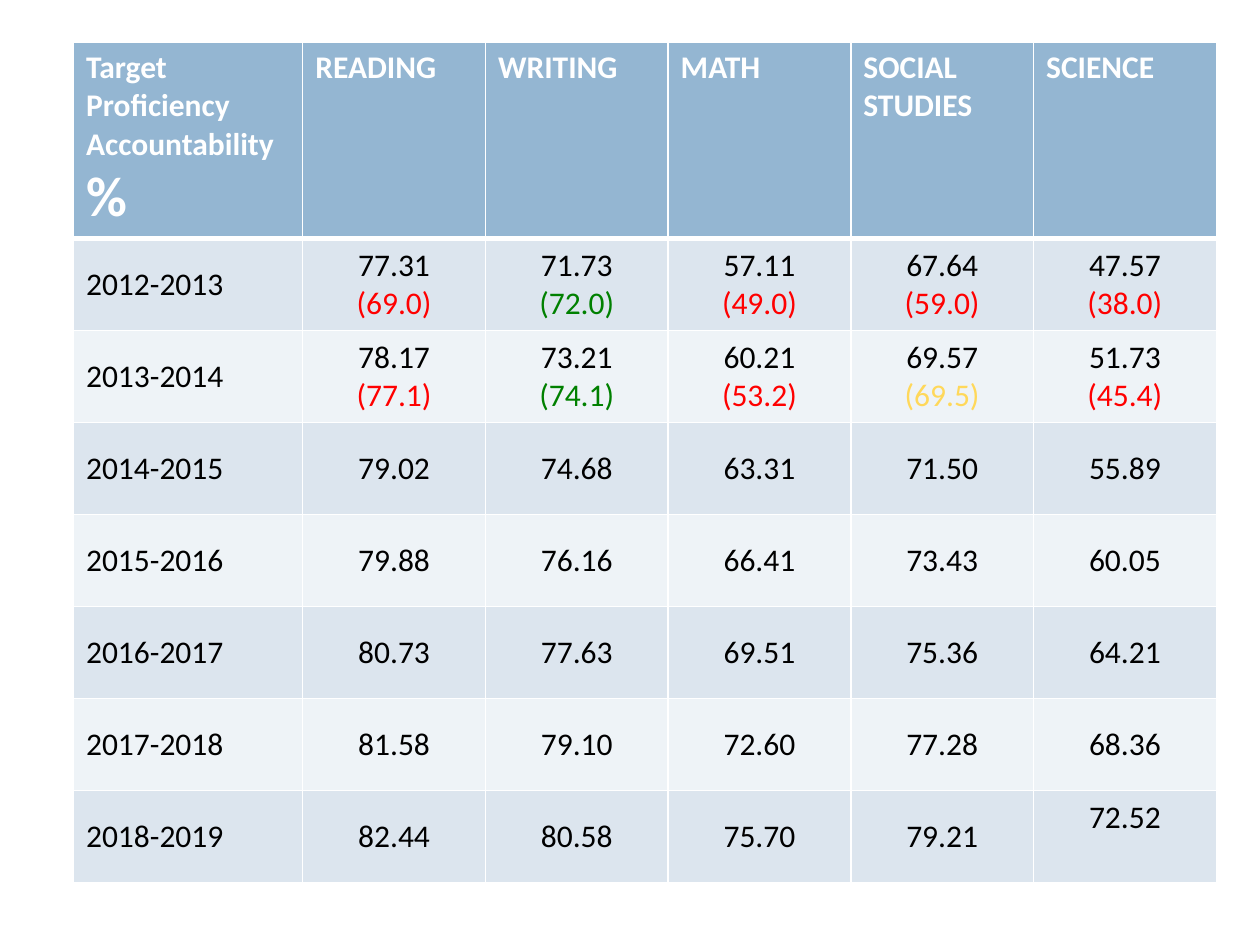
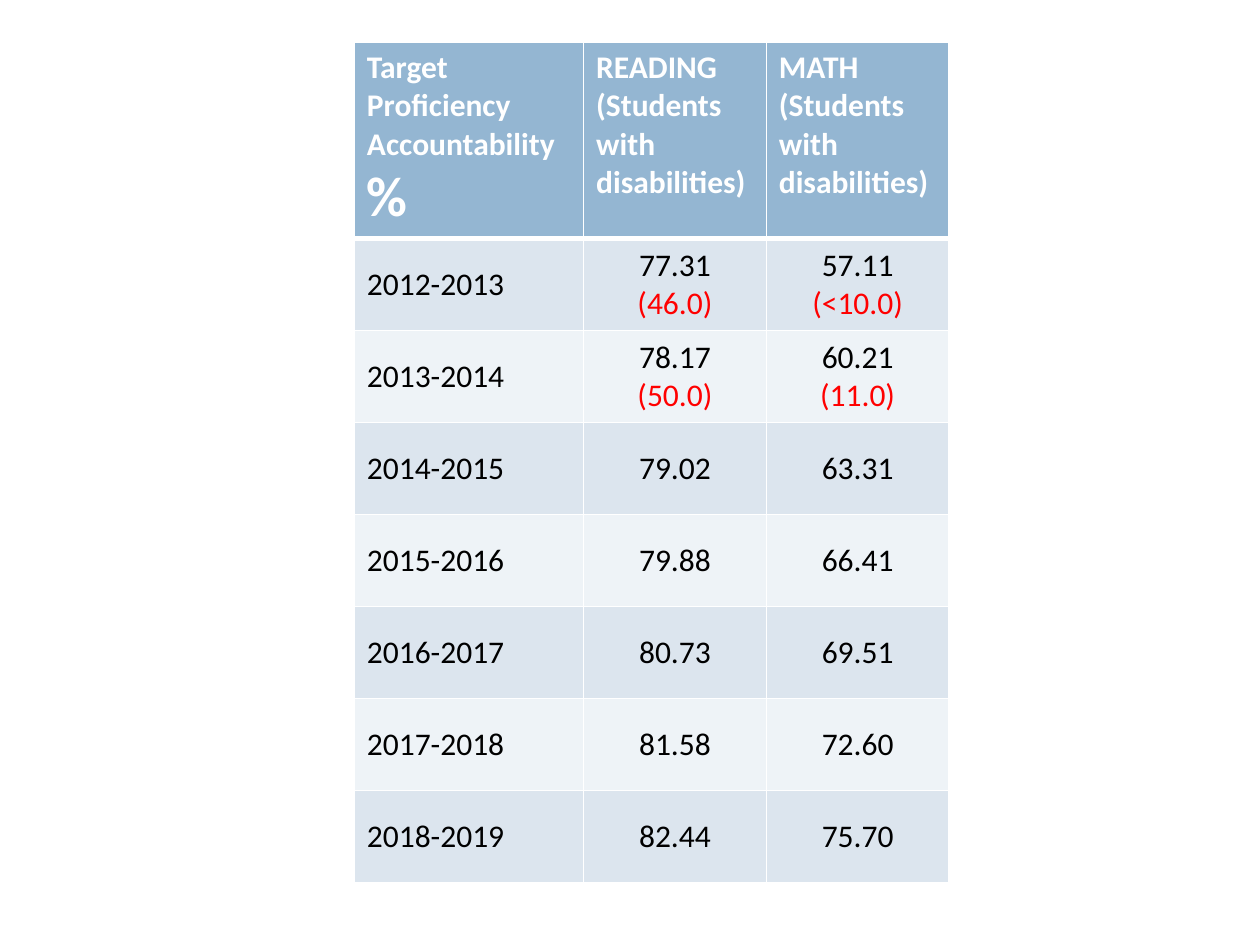
from lxml import etree
from pptx import Presentation
from pptx.dml.color import RGBColor
from pptx.enum.text import MSO_ANCHOR, PP_ALIGN
from pptx.oxml.ns import qn
from pptx.util import Pt

TOP, MIDDLE = MSO_ANCHOR.TOP, MSO_ANCHOR.MIDDLE
LEFT, CENTER = PP_ALIGN.LEFT, PP_ALIGN.CENTER

HUES = {
    "white": "FFFFFF", "black": "000000", "head": "94B6D2",
    "dark": "DCE5EE", "light": "EEF3F7",
    "miss": "FF0000", "met": "008000", "near": "FFD85A",
}
YEARS = [f"{year}-{year + 1}" for year in range(2012, 2019)]
GOALS = {
    "READING": ["77.31", "78.17", "79.02", "79.88", "80.73", "81.58", "82.44"],
    "WRITING": ["71.73", "73.21", "74.68", "76.16", "77.63", "79.10", "80.58"],
    "MATH": ["57.11", "60.21", "63.31", "66.41", "69.51", "72.60", "75.70"],
    "SOCIAL\nSTUDIES": ["67.64", "69.57", "71.50", "73.43", "75.36", "77.28", "79.21"],
    "SCIENCE": ["47.57", "51.73", "55.89", "60.05", "64.21", "68.36", "72.52"],
}
ALL = {
    "READING": [("69.0", "miss"), ("77.1", "miss")],
    "WRITING": [("72.0", "met"), ("74.1", "met")],
    "MATH": [("49.0", "miss"), ("53.2", "miss")],
    "SOCIAL\nSTUDIES": [("59.0", "miss"), ("69.5", "near")],
    "SCIENCE": [("38.0", "miss"), ("45.4", "miss")],
}
SPECIAL = {
    "READING": [("46.0", "miss"), ("50.0", "miss")],
    "MATH": [("<10.0", "miss"), ("11.0", "miss")],
}


class Deck:
    font, size, large = "Calibri", 18, 32
    first, width = 131, 104.4
    head, row, height = 92.9, 52.6, 479

    def __init__(self):
        self.show = Presentation()
        self.show.slide_width, self.show.slide_height = Pt(720), Pt(540)
        self.slide = None

    def page(self):
        self.slide = self.show.slides.add_slide(self.show.slide_layouts[6])

    def edge(self, cell, side, width):
        line = etree.SubElement(cell._tc.get_or_add_tcPr(), qn(f"a:ln{side}"), w=str(Pt(width)))
        fill = etree.SubElement(line, qn("a:solidFill"))
        etree.SubElement(fill, qn("a:srgbClr"), val=HUES["white"])

    def cell(self, cell, lines, fill, align=LEFT, anchor=MIDDLE, bold=False, top=1, base=1):
        for side, width in zip("LRTB", (1, 1, top, base)):
            self.edge(cell, side, width)
        cell.fill.solid()
        cell.fill.fore_color.rgb = RGBColor.from_string(HUES[fill])
        cell.vertical_anchor = anchor
        cell.text = "\n".join(text for text, hue in lines)
        for para, (text, hue) in zip(cell.text_frame.paragraphs, lines):
            para.alignment = align
            para.font.name = self.font
            para.font.size = Pt(self.large if text == "%" else self.size)
            para.font.bold = bold
            para.font.color.rgb = RGBColor.from_string(HUES[hue])

    def table(self, left, scores, note=""):
        heads = ["Target\nProficiency\nAccountability\n%"] + [name + note for name in scores]
        frame = self.slide.shapes.add_table(
            len(YEARS) + 1, len(heads), Pt(left), Pt(24),
            Pt(self.first + self.width * len(scores)), Pt(self.height))
        grid = frame.table
        for spot, col in enumerate(grid.columns):
            col.width = Pt(self.width if spot else self.first)
        for spot, row in enumerate(grid.rows):
            row.height = Pt(self.row if spot else self.head)
        frame.height = Pt(self.height)
        for col, text in enumerate(heads):
            lines = [(part, "white") for part in text.split("\n")]
            self.cell(grid.cell(0, col), lines, "head", anchor=TOP, bold=True, base=3)
        for row, year in enumerate(YEARS, 1):
            fill = "dark" if row % 2 else "light"
            top = 3 if row == 1 else 1
            self.cell(grid.cell(row, 0), [(year, "black")], fill, top=top)
            for col, (name, marks) in enumerate(scores.items(), 1):
                lines = [(GOALS[name][row - 1], "black")]
                lines += [(f"({mark})", hue) for mark, hue in marks[row - 1:row]]
                self.cell(grid.cell(row, col), lines, fill, CENTER, top=top)
        return grid


def main():
    deck = Deck()
    deck.page()
    grid = deck.table(42, ALL)
    grid.cell(len(YEARS), len(ALL)).margin_bottom = Pt(25.6)
    deck.page()
    deck.table(202.5, SPECIAL, "\n(Students with disabilities)")
    deck.show.save("out.pptx")


if __name__ == "__main__":
    main()
